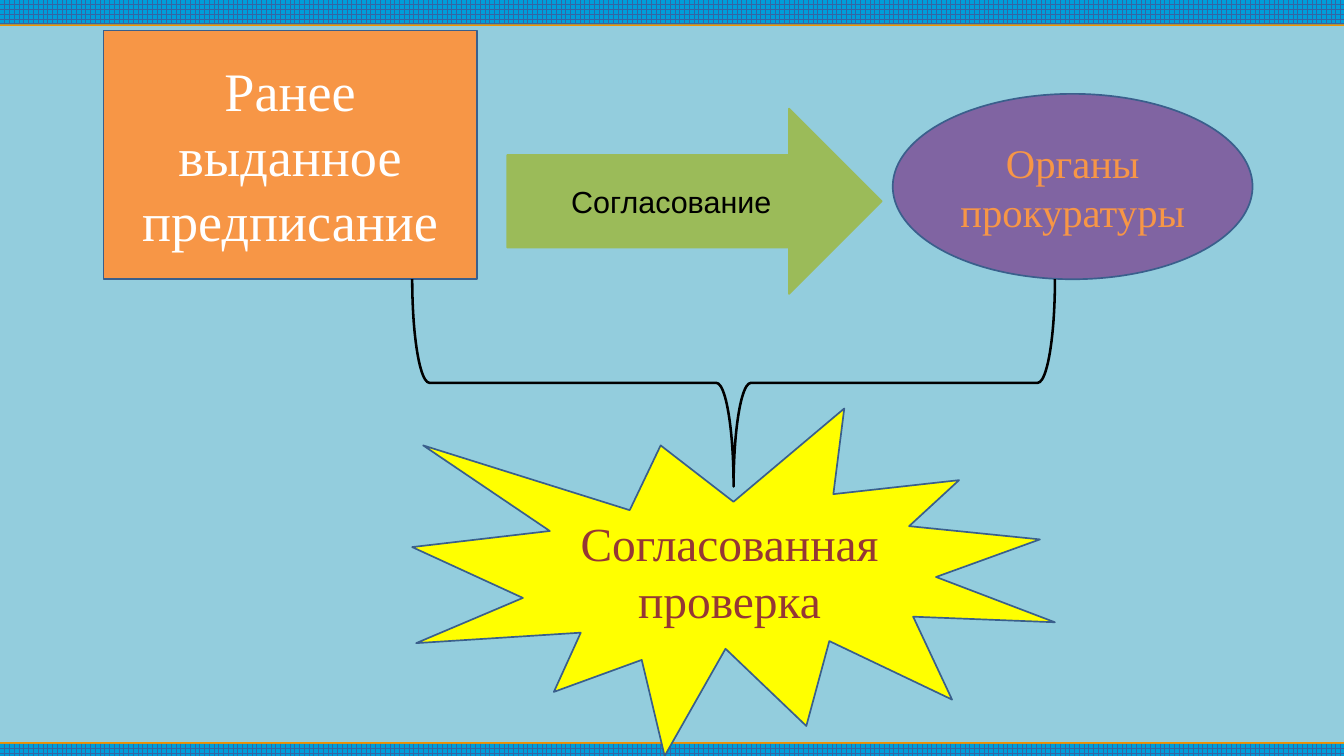
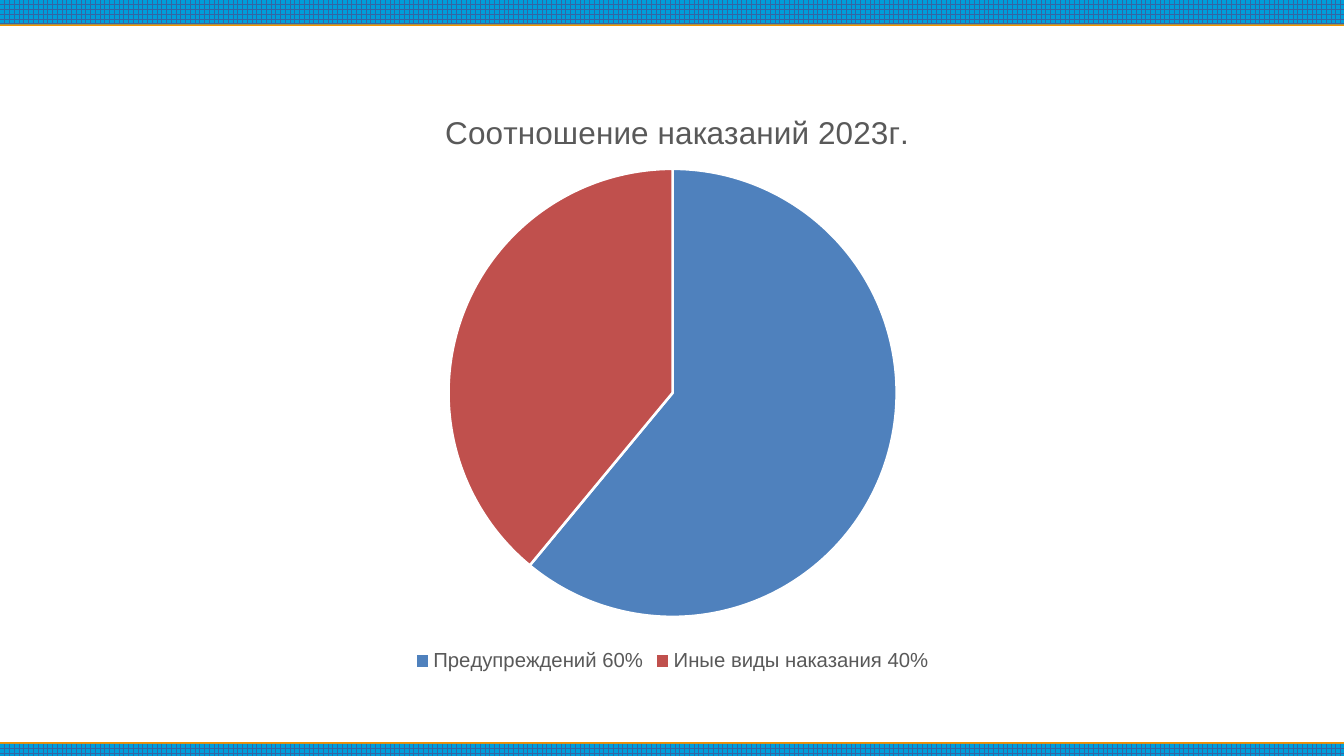
from lxml import etree
from pptx import Presentation
from pptx.chart.data import CategoryChartData
from pptx.dml.color import RGBColor
from pptx.enum.chart import XL_CHART_TYPE, XL_LEGEND_POSITION
from pptx.enum.dml import MSO_PATTERN
from pptx.enum.shapes import MSO_SHAPE
from pptx.enum.text import MSO_ANCHOR, PP_ALIGN
from pptx.oxml.ns import qn
from pptx.util import Inches, Pt

RECT, ELLIPSE = MSO_SHAPE.RECTANGLE, MSO_SHAPE.OVAL
ARROW, BURST = MSO_SHAPE.RIGHT_ARROW, MSO_SHAPE.EXPLOSION1
BRACE = MSO_SHAPE.RIGHT_BRACE
GRID = MSO_PATTERN.LARGE_GRID
PIE, BOTTOM = XL_CHART_TYPE.PIE, XL_LEGEND_POSITION.BOTTOM
CENTER, MIDDLE = PP_ALIGN.CENTER, MSO_ANCHOR.MIDDLE

# Shared style
WIDTH, HEIGHT = 11.02, 6.2
SANS, SERIF = "Arial", "Times New Roman"
SKY, WHITE, BLACK = "93CDDD", "FFFFFF", "000000"
BAND_BACK, BAND_GRID, BAND_EDGE = "009EDA", "3465A4", "F49100"
ORANGE, GREEN, PURPLE, YELLOW = "F79646", "9BBB59", "8064A2", "FFFF00"
OUTLINE, MAROON, GREY = "3A5F8C", "953735", "595959"
SLICE_COLORS = ("4F81BD", "C0504D")


def rgb(value):
    return RGBColor.from_string(value)


def style_font(font, name, size, color):
    font.name, font.size = name, Pt(size)
    font.color.rgb = rgb(color)


def add_plain(slide, kind, box):
    shape = slide.shapes.add_shape(kind, *map(Inches, box))
    shape.shadow.inherit = False
    return shape


def add_block(slide, kind, box, fill, line, text, font, size, color):
    """Filled, outlined shape with centred text."""
    block = add_plain(slide, kind, box)
    block.fill.solid()
    block.fill.fore_color.rgb = rgb(fill)
    block.line.color.rgb = rgb(line)
    block.line.width = Pt(1)
    frame = block.text_frame
    frame.word_wrap = True
    frame.vertical_anchor = MIDDLE
    paragraph = frame.paragraphs[0]
    paragraph.alignment = CENTER
    run = paragraph.add_run()
    run.text = text
    style_font(run.font, font, size, color)


def add_band(slide, top, height, edge_angle):
    """Grid band whose hard shadow forms an orange edge."""
    band = add_plain(slide, RECT, (0, top, WIDTH, height))
    band.fill.patterned()
    band.fill.pattern = GRID
    band.fill.fore_color.rgb = rgb(BAND_GRID)
    band.fill.back_color.rgb = rgb(BAND_BACK)
    band.line.fill.background()
    effects = band._element.spPr.find(qn("a:effectLst"))
    edge = etree.SubElement(effects, qn("a:outerShdw"), blurRad="0",
                            dist=str(Pt(0.9)), dir=str(edge_angle * 60000),
                            algn="ctr", rotWithShape="0")
    etree.SubElement(edge, qn("a:srgbClr"), val=BAND_EDGE)


def add_slide(prs, background):
    slide = prs.slides.add_slide(prs.slide_layouts[6])
    slide.background.fill.solid()
    slide.background.fill.fore_color.rgb = rgb(background)
    add_band(slide, 0, 0.2, 90)
    add_band(slide, HEIGHT - 0.1, 0.1, 270)
    return slide


def add_down_brace(slide, left, top, width, height):
    """Right brace turned to point down, filling the given box."""
    box = (left + (width - height) / 2, top + (height - width) / 2, height, width)
    brace = add_plain(slide, BRACE, box)
    brace.rotation = 90
    brace.fill.background()
    brace.line.color.rgb = rgb(BLACK)
    brace.line.width = Pt(1.5)


def build_approval_slide(prs):
    slide = add_slide(prs, SKY)
    lower_left, lower_width = 3.38, 5.27
    # Upper row: order, approval, prosecutors
    add_block(slide, ARROW, (4.16, 0.89, 3.07, 1.52), GREEN, GREEN,
              "Согласование", SANS, 18, BLACK)
    add_block(slide, RECT, (0.85, 0.25, 3.06, 2.04), ORANGE, OUTLINE,
              "Ранее выданное предписание", SERIF, 32, WHITE)
    add_block(slide, ELLIPSE, (7.32, 0.77, 2.95, 1.52), PURPLE, OUTLINE,
              "Органы прокуратуры", SERIF, 24, ORANGE)
    # Outcome, joined to the row by a brace
    add_block(slide, BURST, (lower_left, 3.35, lower_width, 2.85), YELLOW, OUTLINE,
              "Согласованная проверка", SERIF, 28, MAROON)
    add_down_brace(slide, lower_left, 2.29, lower_width, 1.7)


def set_layout(element, **fractions):
    """Place a chart part by fractions of the chart area."""
    layout = element.find(qn("c:layout"))
    if layout is None:
        layout = etree.Element(qn("c:layout"))
        element.insert(0, layout)
    manual = etree.SubElement(layout, qn("c:manualLayout"))
    if "w" in fractions:
        etree.SubElement(manual, qn("c:layoutTarget"), val="inner")
    for axis in ("x", "y"):
        etree.SubElement(manual, qn(f"c:{axis}Mode"), val="edge")
    for key, value in fractions.items():
        etree.SubElement(manual, qn(f"c:{key}"), val=str(value))


def add_penalty_pie(slide, box):
    data = CategoryChartData()
    data.categories = ["Предупреждений 60%", "Иные виды наказания 40%"]
    data.add_series("Series 1", (61, 39))
    chart = slide.shapes.add_chart(PIE, *map(Inches, box), data).chart
    style_font(chart.font, SANS, 10, BLACK)
    # Title
    chart.has_title = True
    title_run = chart.chart_title.text_frame.paragraphs[0].add_run()
    title_run.text = "Соотношение наказаний 2023г."
    style_font(title_run.font, SANS, 18.6, GREY)
    title_run.font.bold = False
    set_layout(chart.chart_title._element, x=0.24, y=0.045)
    # Legend
    chart.has_legend = True
    chart.legend.position = BOTTOM
    chart.legend.include_in_layout = False
    style_font(chart.legend.font, SANS, 12, GREY)
    # Slices
    plot = chart.plots[0]
    plot.vary_by_categories = True
    set_layout(plot._element.getparent(), x=0.25, y=0.15, w=0.5, h=0.75)
    for index, color in enumerate(SLICE_COLORS):
        slice_format = plot.series[0].points[index].format
        slice_format.fill.solid()
        slice_format.fill.fore_color.rgb = rgb(color)
        slice_format.line.color.rgb = rgb(WHITE)
        slice_format.line.width = Pt(1.5)


def build_penalty_slide(prs):
    slide = add_slide(prs, WHITE)
    add_penalty_pie(slide, (1.84, 0.65, 7.35, 4.9))


def main():
    prs = Presentation()
    prs.slide_width, prs.slide_height = Inches(WIDTH), Inches(HEIGHT)
    build_approval_slide(prs)
    build_penalty_slide(prs)
    prs.save("out.pptx")


if __name__ == "__main__":
    main()
